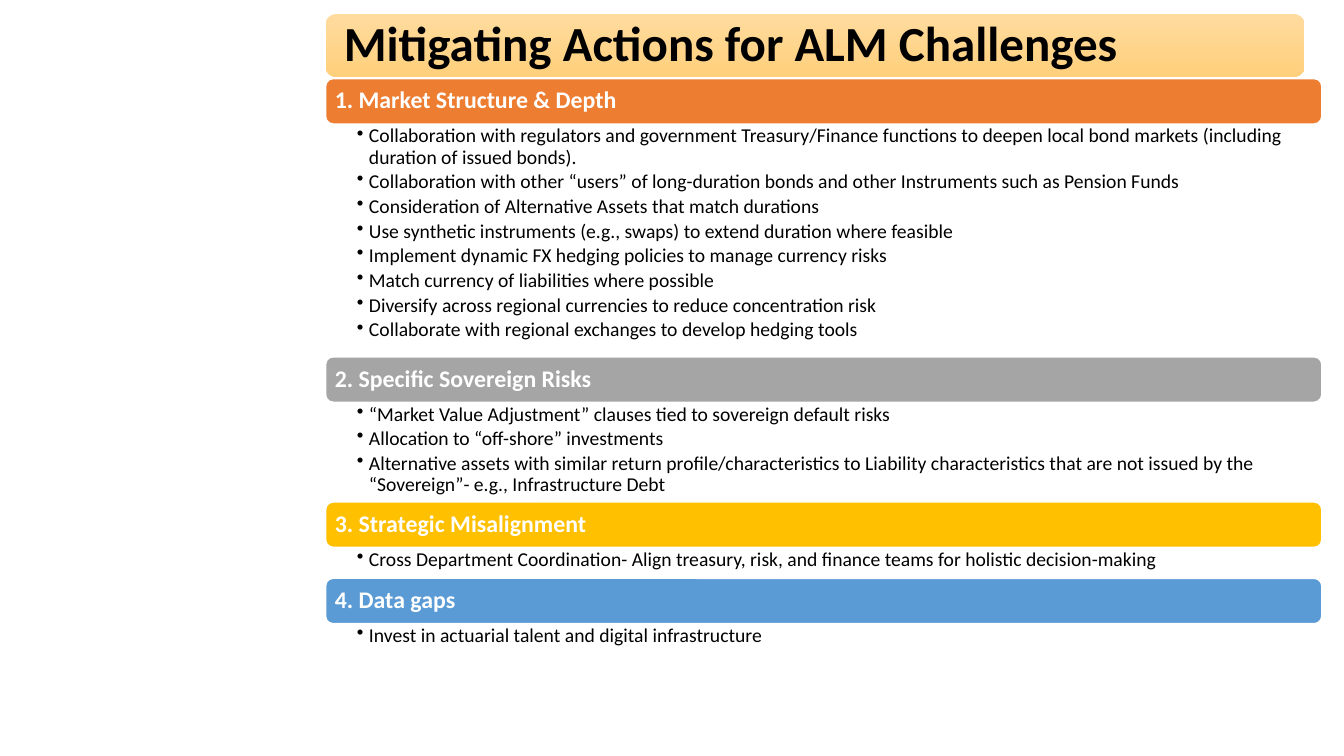
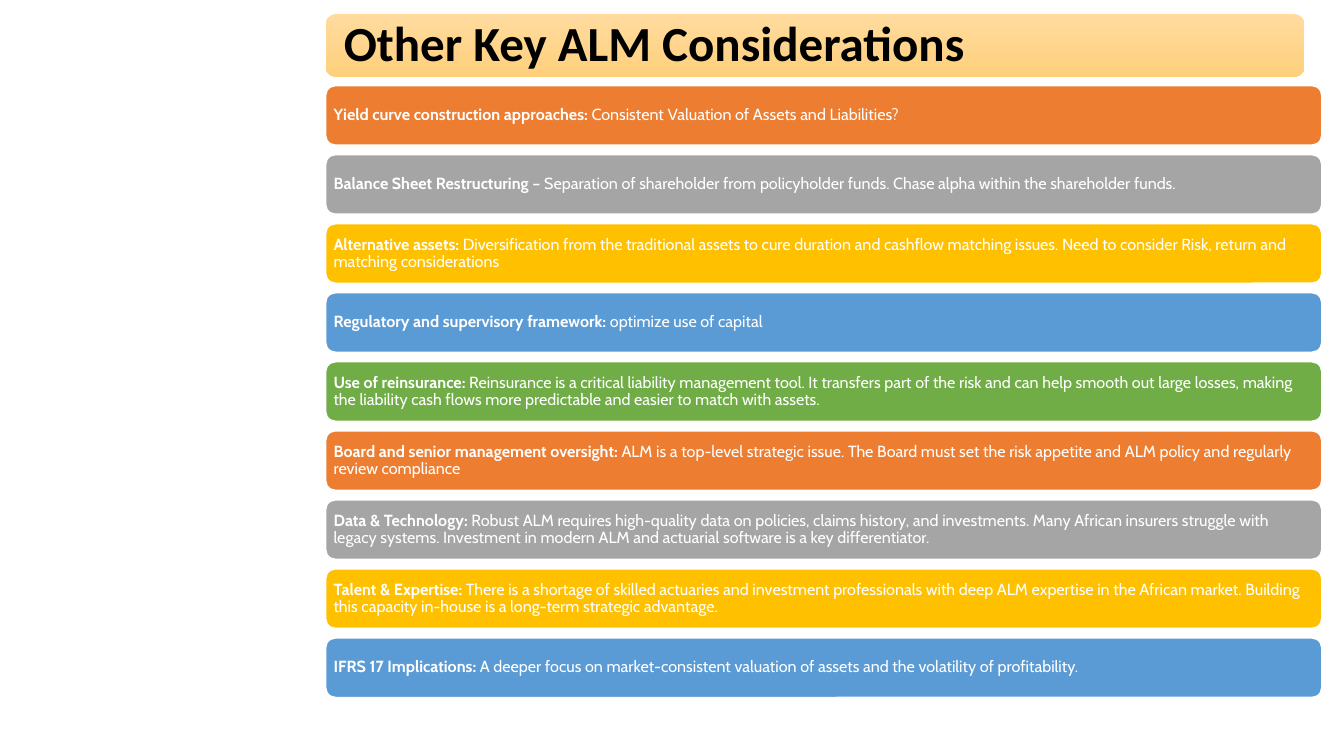
"""Build two slides on asset-liability management actions and considerations."""
from collections import namedtuple
from itertools import cycle

from lxml import etree
from pptx import Presentation
from pptx.dml.color import RGBColor
from pptx.enum.shapes import MSO_SHAPE
from pptx.enum.text import MSO_ANCHOR, PP_ALIGN
from pptx.oxml.ns import qn
from pptx.util import Inches, Pt

ROUNDED = MSO_SHAPE.ROUNDED_RECTANGLE
MIDDLE, TOP = MSO_ANCHOR.MIDDLE, MSO_ANCHOR.TOP
LEFT = PP_ALIGN.LEFT

BLACK = RGBColor(0x00, 0x00, 0x00)
WHITE = RGBColor(0xFF, 0xFF, 0xFF)
PALE_AMBER = RGBColor(0xFF, 0xDB, 0x9E)
DEEP_AMBER = RGBColor(0xFF, 0xD0, 0x7C)
ORANGE = RGBColor(0xED, 0x7D, 0x31)
GREY = RGBColor(0xA5, 0xA5, 0xA5)
GOLD = RGBColor(0xFF, 0xC0, 0x00)
BLUE = RGBColor(0x5B, 0x9B, 0xD5)
GREEN = RGBColor(0x70, 0xAD, 0x47)
ACCENTS = (ORANGE, GREY, GOLD, BLUE, GREEN)

SLIDE_W, SLIDE_H = Inches(13.33), Inches(7.5)
COL, ROW = SLIDE_W / 100, SLIDE_H / 100

Box = namedtuple("Box", "left top width height")
TITLE_BOX = Box(24.23, 1.87, 72.84, 8.27)
SECTIONS_BOX = Box(24.23, 10.4, 74.12, 76.2)
BARS_BOX = Box(24.23, 11.33, 74.12, 80.93)
HEADING_ROWS = 6
GAP_SHARE = 0.16
BULLET_INDENT = Inches(0.12)

TITLE_FONT = {"name": "Calibri", "size": Pt(35), "bold": True}
HEADING_FONT = {"name": "Calibri", "size": Pt(17), "bold": True}
BULLET_FONT = {"name": "Calibri", "size": Pt(14), "bold": False}
TOPIC_FONT = {"name": "Cabin", "size": Pt(11.5), "bold": True}
DETAIL_FONT = {**TOPIC_FONT, "bold": False}

Section = namedtuple("Section", "heading bullet_rows bullets")
SECTIONS = (
    Section("1. Market Structure & Depth", 30.8, (
        "Collaboration with regulators and government Treasury/Finance functions to deepen "
        "local bond markets (including duration of issued bonds).",
        "Collaboration with other “users” of long-duration bonds and other Instruments such "
        "as Pension Funds",
        "Consideration of Alternative Assets that match durations",
        "Use synthetic instruments (e.g., swaps) to extend duration where feasible",
        "Implement dynamic FX hedging policies to manage currency risks",
        "Match currency of liabilities where possible",
        "Diversify across regional currencies to reduce concentration risk",
        "Collaborate with regional exchanges to develop hedging tools",
    )),
    Section("2. Specific Sovereign Risks", 13.2, (
        "“Market Value Adjustment” clauses tied to sovereign default risks",
        "Allocation to “off-shore” investments",
        "Alternative assets with similar return profile/characteristics to Liability "
        "characteristics that are not issued by the “Sovereign”- e.g., Infrastructure Debt",
    )),
    Section("3. Strategic Misalignment", 4.1, (
        "Cross Department Coordination- Align treasury, risk, and finance teams for holistic "
        "decision-making",
    )),
    Section("4. Data gaps", 4.1, (
        "Invest in actuarial talent and digital infrastructure",
    )),
)

CONSIDERATIONS = (
    ("Yield curve construction approaches: ",
     "Consistent Valuation of Assets and Liabilities?"),
    ("Balance Sheet Restructuring – ",
     "Separation of shareholder from policyholder funds. Chase alpha within the shareholder "
     "funds."),
    ("Alternative assets: ",
     "Diversification from the traditional assets to cure duration and cashflow matching "
     "issues. Need to consider Risk, return and matching considerations"),
    ("Regulatory and supervisory framework: ", "optimize use of capital"),
    ("Use of reinsurance: ",
     "Reinsurance is a critical liability management tool. It transfers part of the risk and "
     "can help smooth out large losses, making the liability cash flows more predictable and "
     "easier to match with assets."),
    ("Board and senior management oversight: ",
     "ALM is a top-level strategic issue. The Board must set the risk appetite and ALM policy "
     "and regularly review compliance"),
    ("Data & Technology: ",
     "Robust ALM requires high-quality data on policies, claims history, and investments. "
     "Many African insurers struggle with legacy systems. Investment in modern ALM and "
     "actuarial software is a key differentiator."),
    ("Talent & Expertise: ",
     "There is a shortage of skilled actuaries and investment professionals with deep ALM "
     "expertise in the African market. Building this capacity in-house is a long-term "
     "strategic advantage."),
    ("IFRS 17 Implications: ",
     "A deeper focus on market-consistent valuation of assets and the volatility of "
     "profitability."),
)


def set_format(target, values):
    """Set every named format value on the target."""
    for name, value in values.items():
        setattr(target, name, value)


def to_emu(box):
    """Turn a box in columns and rows into slide lengths."""
    return (round(box.left * COL), round(box.top * ROW),
            round(box.width * COL), round(box.height * ROW))


def set_frame(frame, anchor, left, top, right, bottom):
    """Set wrapping, anchor and margins in inches of a text frame."""
    set_format(frame, {
        "word_wrap": True, "vertical_anchor": anchor,
        "margin_left": Inches(left), "margin_top": Inches(top),
        "margin_right": Inches(right), "margin_bottom": Inches(bottom),
    })


def add_run(paragraph, text, font, color):
    """Append formatted text to a paragraph."""
    run = paragraph.add_run()
    run.text = text
    set_format(run.font, font)
    run.font.color.rgb = color


def add_band(slide, box, margin, pieces, color):
    """Add a rounded band holding one line of (text, font) pieces."""
    band = slide.shapes.add_shape(ROUNDED, *to_emu(box))
    band.shadow.inherit = False
    set_frame(band.text_frame, MIDDLE, margin, margin, margin, margin)
    line = band.text_frame.paragraphs[0]
    set_format(line, {"alignment": LEFT, "line_spacing": 0.9})
    for text, font in pieces:
        add_run(line, text, font, color)
    return band


def add_accent_band(slide, box, margin, pieces, accent):
    """Add a solid band with a white outline and white text."""
    band = add_band(slide, box, margin, pieces, WHITE)
    band.fill.solid()
    band.fill.fore_color.rgb = accent
    band.line.color.rgb = WHITE
    band.line.width = Pt(1)


def add_title(slide, box, title):
    """Add the amber title band."""
    band = add_band(slide, box, 0.15, [(title, TITLE_FONT)], BLACK)
    band.fill.gradient()
    band.fill.gradient_angle = 270
    for stop, color in zip(band.fill.gradient_stops, (PALE_AMBER, DEEP_AMBER)):
        stop.color.rgb = color
    band.line.fill.background()


def add_bullets(slide, box, bullets):
    """Add a bulleted list that fills the box."""
    frame = slide.shapes.add_textbox(*to_emu(box)).text_frame
    set_frame(frame, TOP, 0.31, 0.02, 0.11, 0.02)
    for index, bullet in enumerate(bullets):
        item = frame.add_paragraph() if index else frame.paragraphs[0]
        properties = item._p.get_or_add_pPr()
        properties.set("marL", str(BULLET_INDENT))
        properties.set("indent", str(-BULLET_INDENT))
        etree.SubElement(properties, qn("a:buChar")).set("char", "•")
        set_format(item, {"level": 1, "line_spacing": 0.9, "space_after": Pt(2.5)})
        add_run(item, bullet, BULLET_FONT, BLACK)


def add_sections(slide, box, sections):
    """Stack headings and their bullet lists from the top of the box."""
    top = box.top
    for section, accent in zip(sections, cycle(ACCENTS)):
        heading_box = box._replace(top=top, height=HEADING_ROWS)
        add_accent_band(slide, heading_box, 0.07, [(section.heading, HEADING_FONT)], accent)
        top += HEADING_ROWS
        add_bullets(slide, box._replace(top=top, height=section.bullet_rows), section.bullets)
        top += section.bullet_rows


def add_considerations(slide, box, considerations):
    """Spread equal bars with equal gaps over the box."""
    count = len(considerations)
    height = box.height / (count + (count - 1) * GAP_SHARE)
    for index, ((topic, detail), accent) in enumerate(zip(considerations, cycle(ACCENTS))):
        bar_box = box._replace(top=box.top + index * height * (1 + GAP_SHARE), height=height)
        pieces = [(topic, TOPIC_FONT), (detail, DETAIL_FONT)]
        add_accent_band(slide, bar_box, 0.05, pieces, accent)


def main():
    """Build and save the presentation."""
    deck = Presentation()
    deck.slide_width, deck.slide_height = SLIDE_W, SLIDE_H
    pages = (
        ("Mitigating Actions for ALM Challenges", add_sections, SECTIONS_BOX, SECTIONS),
        ("Other Key ALM Considerations", add_considerations, BARS_BOX, CONSIDERATIONS),
    )
    for title, add_content, box, content in pages:
        slide = deck.slides.add_slide(deck.slide_layouts[6])
        add_title(slide, TITLE_BOX, title)
        add_content(slide, box, content)
    deck.save("out.pptx")


if __name__ == "__main__":
    main()
